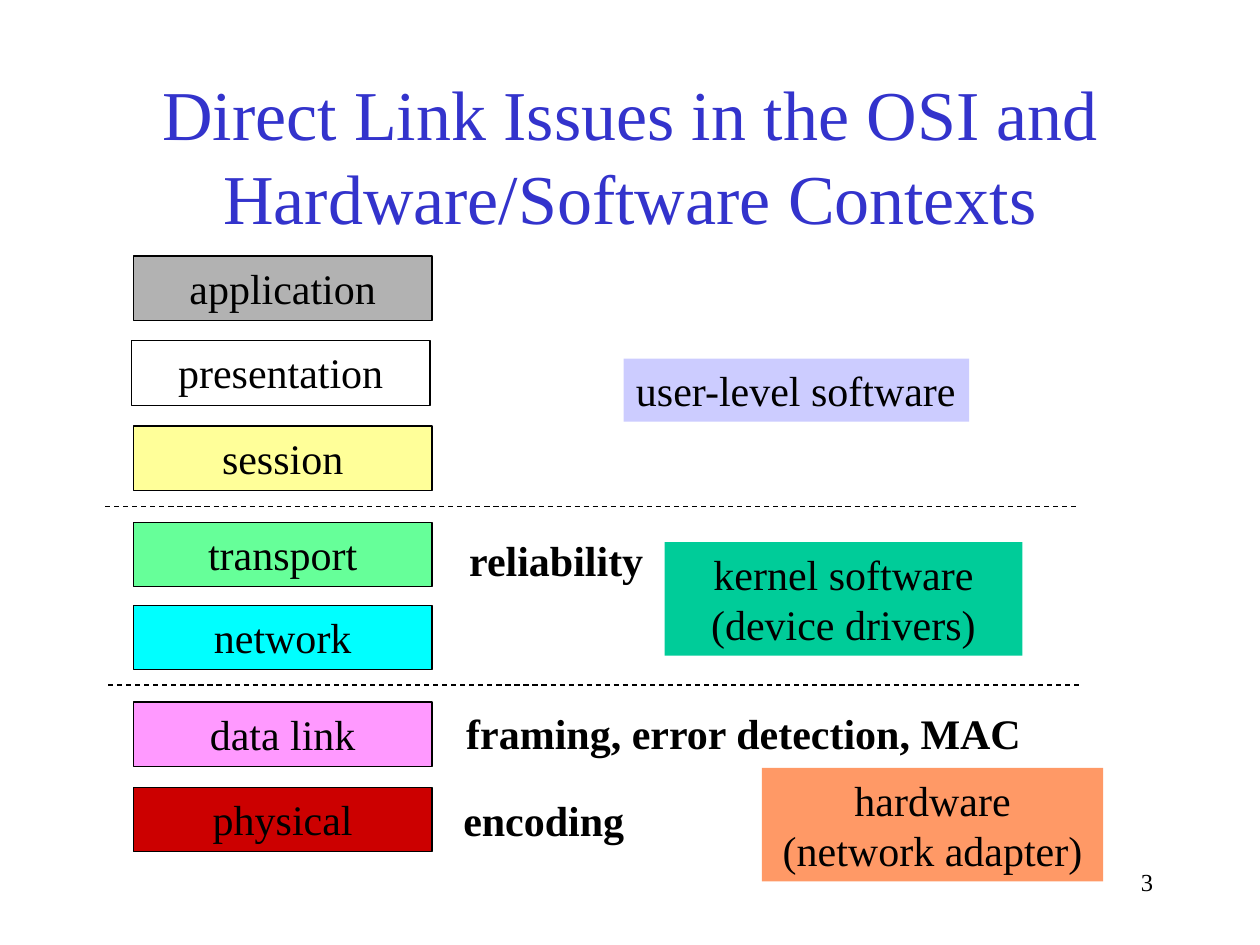
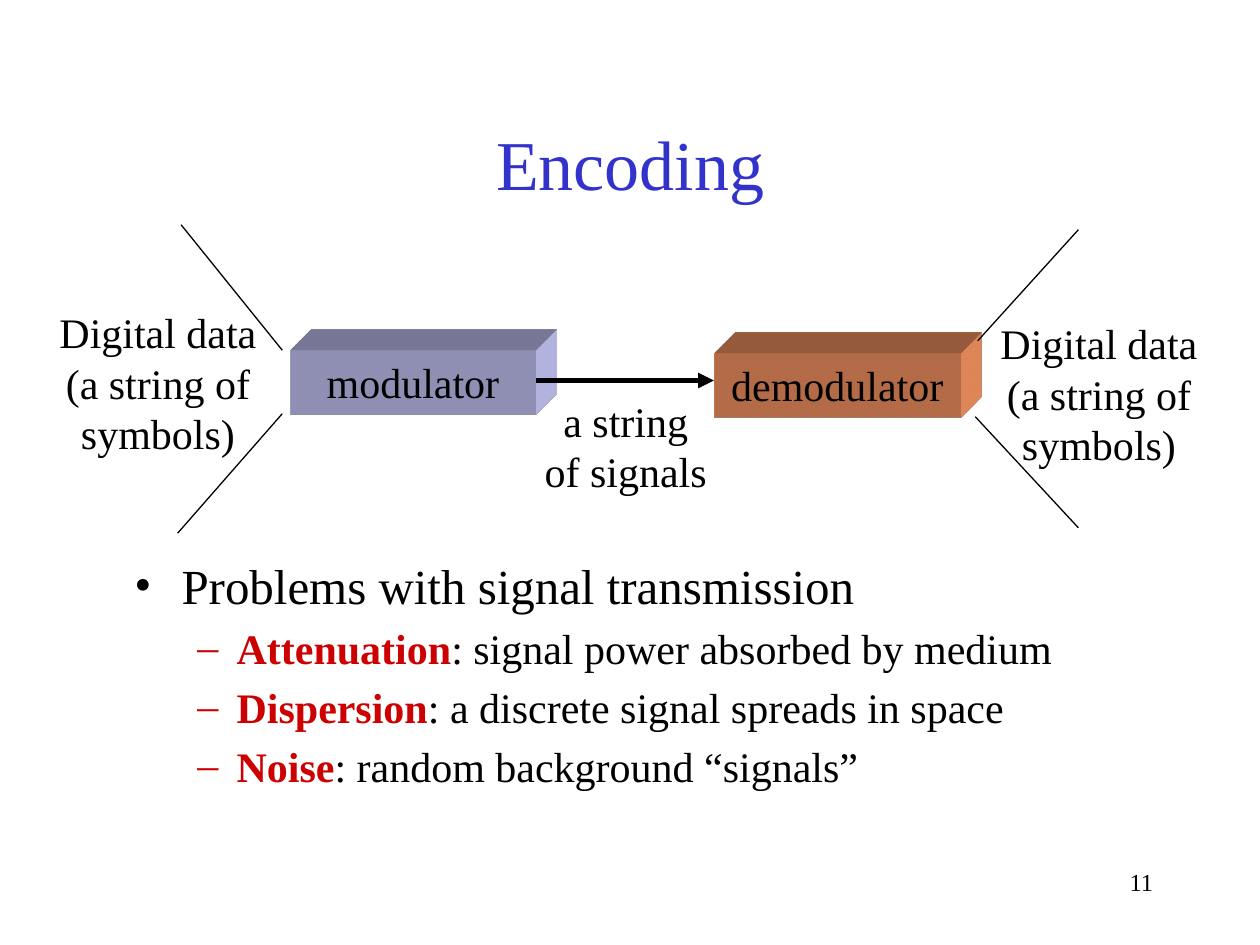
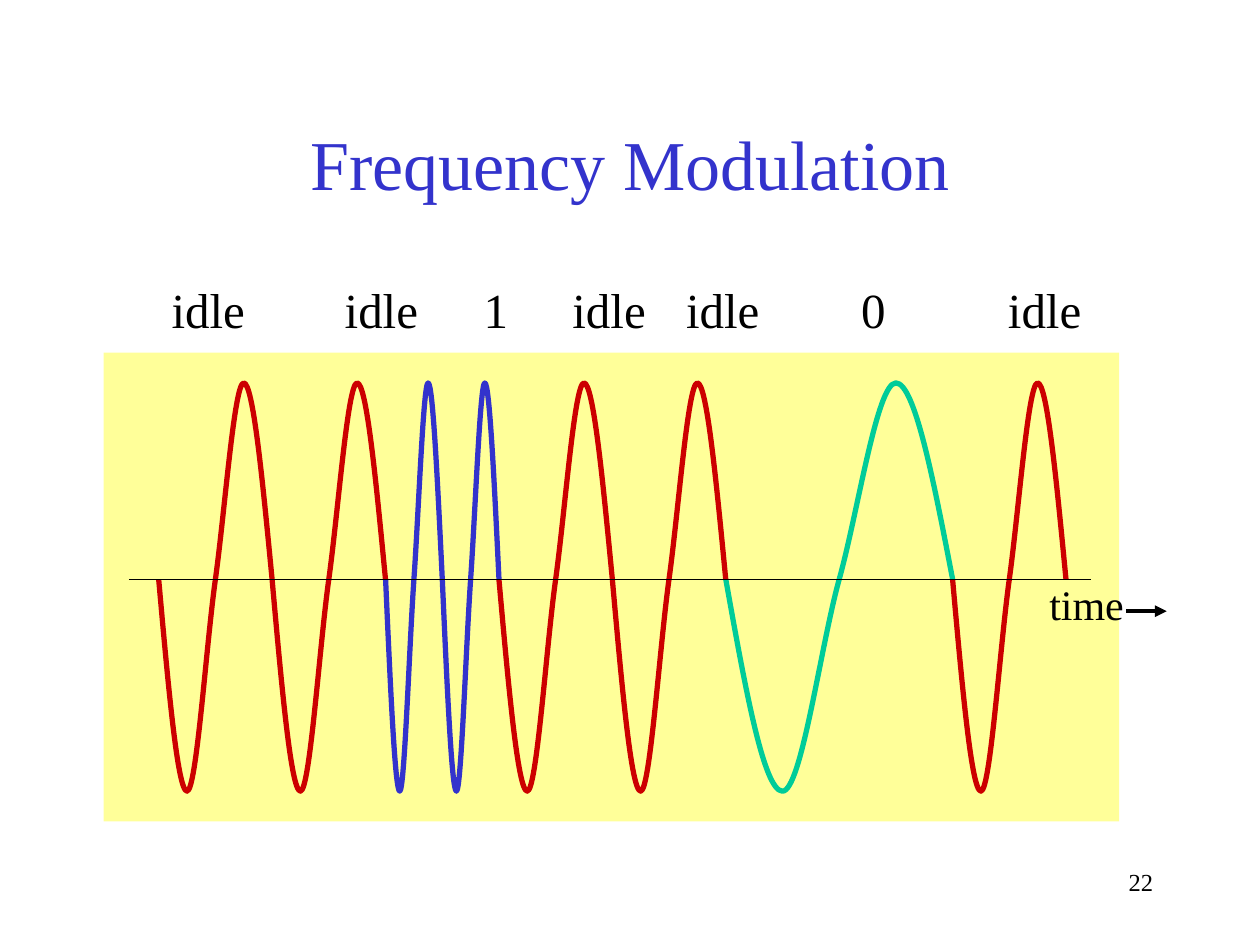
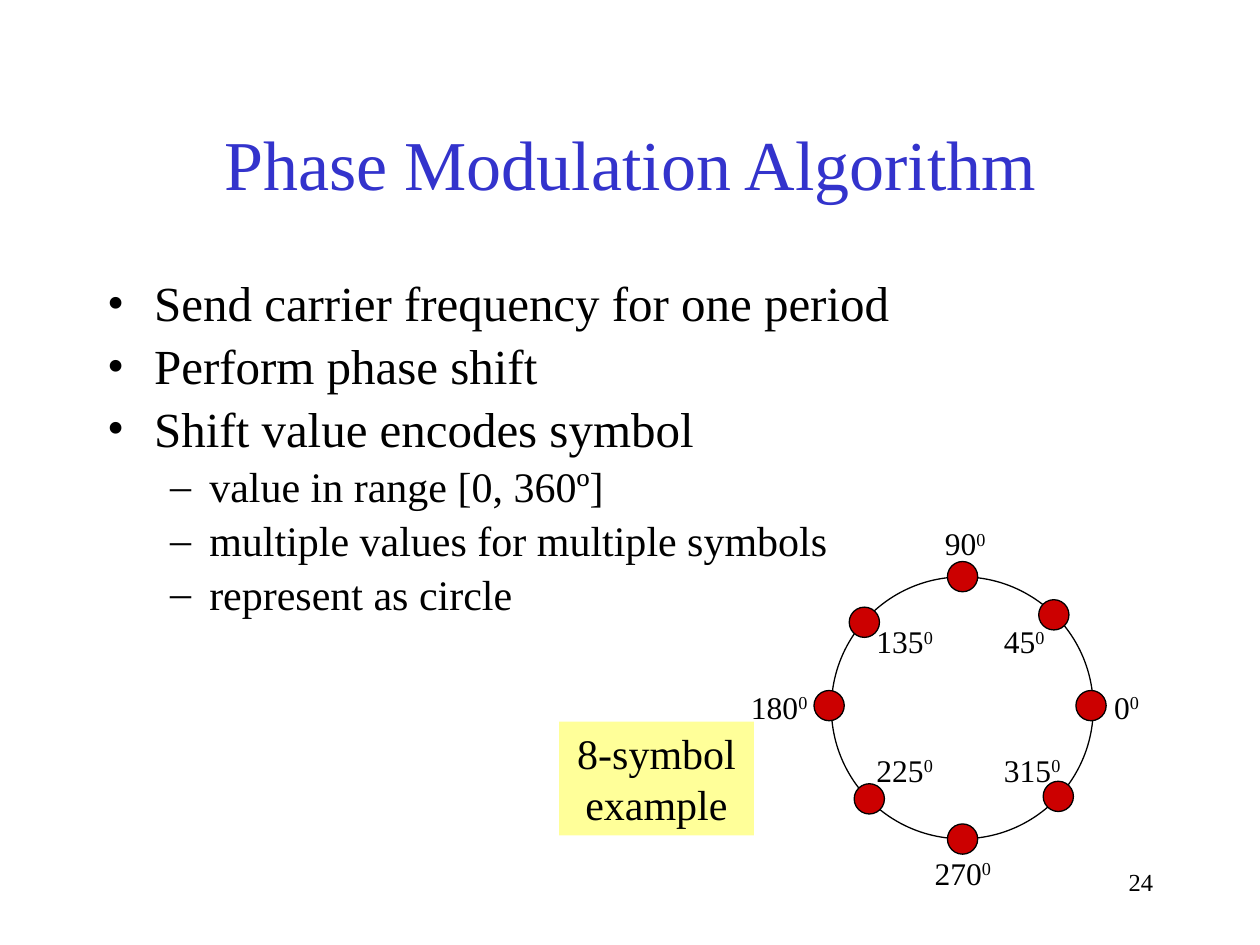
from lxml.etree import SubElement
from pptx import Presentation
from pptx.dml.color import RGBColor
from pptx.enum.dml import MSO_LINE
from pptx.enum.shapes import MSO_CONNECTOR, MSO_SHAPE
from pptx.enum.text import MSO_ANCHOR, MSO_AUTO_SIZE, PP_ALIGN
from pptx.oxml.ns import qn
from pptx.util import Cm, Pt

BLACK = RGBColor(0x00, 0x00, 0x00)
BLUE = RGBColor(0x33, 0x33, 0xCC)
RED = RGBColor(0xCC, 0x00, 0x00)
TEAL = RGBColor(0x00, 0xCC, 0x99)
LILAC = RGBColor(0xCC, 0xCC, 0xFF)
ORANGE = RGBColor(0xFF, 0x99, 0x66)
YELLOW = RGBColor(0xFF, 0xFF, 0x99)
GREEN = RGBColor(0x66, 0xFF, 0x99)
CYAN = RGBColor(0x00, 0xFF, 0xFF)
PINK = RGBColor(0xFF, 0x99, 0xFF)
GRAY = RGBColor(0xB2, 0xB2, 0xB2)

FONT = "Times New Roman"
LEFT, MID, RIGHT = PP_ALIGN.LEFT, PP_ALIGN.CENTER, PP_ALIGN.RIGHT
LEVELS = [("•", 0.95, -0.95, 28), ("–", 2.06, -0.79, 24)]
CURVE = [2.13, 4.27, 4.27, 4.27, 1.37, 0,
         -1.37, -3.96, -3.96, -3.96, -1.98, 0]


class Deck:
    def __init__(self):
        self.prs = Presentation()
        self.prs.slide_width = Cm(25.4)
        self.prs.slide_height = Cm(19.05)
        self.slide = None

    def page(self, title, number, top=1.69, high=3.18):
        self.slide = self.prs.slides.add_slide(self.prs.slide_layouts[6])
        self.text((1.91, top, 21.59, high), title, 40, MID, BLUE,
                  anchor=MSO_ANCHOR.MIDDLE, grow=False)
        self.text((18.22, 17.35, 5.28, 1.27), number, 14, RIGHT, grow=False)

    def run(self, par, text, size, color=BLACK, bold=False, raised=False):
        run = par.add_run()
        run.text = text
        font = run.font
        font.name, font.size, font.bold = FONT, Pt(size), bold
        font.color.rgb = color
        if raised:
            run._r.get_or_add_rPr().set("baseline", "30000")

    def tabs(self, par, stops):
        holder = SubElement(par._p.get_or_add_pPr(), qn("a:tabLst"))
        for stop in stops:
            SubElement(holder, qn("a:tab"), pos=str(Cm(stop)), algn="l")

    def frame(self, shape, wrap=True, grow=True, anchor=MSO_ANCHOR.TOP):
        frame = shape.text_frame
        frame.word_wrap = wrap
        frame.auto_size = (MSO_AUTO_SIZE.SHAPE_TO_FIT_TEXT if grow
                           else MSO_AUTO_SIZE.NONE)
        frame.vertical_anchor = anchor
        return frame

    def area(self, box):
        return self.slide.shapes.add_textbox(*map(Cm, box))

    def text(self, box, text, size=24, align=LEFT, color=BLACK, bold=False,
             **style):
        par = self.frame(self.area(box), **style).paragraphs[0]
        par.alignment = align
        self.run(par, text, size, color, bold)

    def angles(self, box, values, stop=None, wrap=False):
        par = self.frame(self.area(box), wrap).paragraphs[0]
        if stop:
            self.tabs(par, [stop])
        for i, value in enumerate(values):
            self.run(par, ("\t" if i else "") + value, 18)
            self.run(par, "0", 18, raised=True)

    def labels(self, box, items):
        par = self.frame(self.area(box), grow=False).paragraphs[0]
        self.tabs(par, [stop for stop, _ in items])
        self.run(par, "".join("\t" + name for _, name in items), 28)

    def bullets(self, box, rows, pitch=1.0):
        frame = self.frame(self.area(box), grow=False)
        for i, (level, term, text) in enumerate(rows):
            par = frame.add_paragraph() if i else frame.paragraphs[0]
            mark, left, hang, size = LEVELS[level]
            props = par._p.get_or_add_pPr()
            props.set("marL", str(Cm(left)))
            props.set("indent", str(Cm(hang)))
            SubElement(props, qn("a:buFont"), typeface=FONT)
            SubElement(props, qn("a:buChar"), char=mark)
            par.level = level
            par.line_spacing = pitch
            par.space_before = Pt(0.2 * size if i else 0)
            par.font.name, par.font.size = FONT, Pt(size)
            if term:
                self.run(par, term, size, RED, bold=True)
            self.run(par, text, size)

    def shape(self, box, fill=None, text="", edge=True, kind=MSO_SHAPE.RECTANGLE,
              align=MID, wrap=True):
        shape = self.slide.shapes.add_shape(kind, *map(Cm, box))
        shape.shadow.inherit = False
        if fill is None:
            shape.fill.background()
        else:
            shape.fill.solid()
            shape.fill.fore_color.rgb = fill
        if edge:
            shape.line.color.rgb = BLACK
            shape.line.width = Pt(0.75)
        else:
            shape.line.fill.background()
        if text:
            par = self.frame(shape, wrap).paragraphs[0]
            par.alignment = align
            self.run(par, text, 24)
        return shape

    def block(self, box, fill, text):
        props = self.shape(box, fill, text, edge=False)._element.spPr
        scene = SubElement(props, qn("a:scene3d"))
        SubElement(scene, qn("a:camera"), prst="legacyObliqueTopRight")
        SubElement(scene, qn("a:lightRig"), rig="legacyFlat3", dir="b")
        solid = SubElement(props, qn("a:sp3d"), extrusionH="430200",
                           prstMaterial="legacyMatte")
        tint = SubElement(solid, qn("a:extrusionClr"))
        SubElement(tint, qn("a:srgbClr"), val=str(fill))

    def line(self, ends, width=0.75, dash=False, arrow=False):
        link = self.slide.shapes.add_connector(
            MSO_CONNECTOR.STRAIGHT, *map(Cm, ends))
        link.line.color.rgb = BLACK
        link.line.width = Pt(width)
        if dash:
            link.line.dash_style = MSO_LINE.DASH
        props = link._element.spPr
        if arrow:
            SubElement(props.find(qn("a:ln")), qn("a:tailEnd"), type="triangle")
        SubElement(props, qn("a:effectLst"))

    def wave(self, left, axis, width, color):
        pen = self.slide.shapes.build_freeform(Cm(left), Cm(axis))
        pen.add_line_segments(
            [(Cm(left + width * i / len(CURVE)), Cm(axis + rise))
             for i, rise in enumerate(CURVE, 1)], close=False)
        shape = pen.convert_to_shape()
        self.bend(shape)
        shape.shadow.inherit = False
        shape.fill.background()
        shape.line.color.rgb = color
        shape.line.width = Pt(3)

    def bend(self, shape):
        legs = list(shape._element.iter(qn("a:lnTo")))
        for i in range(0, len(legs), 3):
            home = legs[i].getparent()
            arc = SubElement(home, qn("a:cubicBezTo"))
            for leg in legs[i:i + 3]:
                arc.append(leg[0])
                home.remove(leg)


def layers(deck):
    deck.page("Direct Link Issues in the OSI and Hardware/Software Contexts",
              "3", 1.37, 3.5)
    for name, left, top, fill in [
            ("application", 2.69, 5.16, GRAY),
            ("presentation", 2.65, 6.87, None),
            ("session", 2.69, 8.59, YELLOW),
            ("transport", 2.69, 10.53, GREEN),
            ("network", 2.69, 12.2, CYAN),
            ("data link", 2.69, 14.15, PINK),
            ("physical", 2.69, 15.87, RED)]:
        deck.shape((left, top, 6.02, 1.3), fill, name)
    for left, top in [(2.12, 10.21), (2.18, 13.81)]:
        deck.line((left, top, left + 19.63, top), dash=True)
    deck.shape((12.57, 7.23, 6.97, 1.27), LILAC, "user-level software",
               edge=False, align=LEFT, wrap=False)
    deck.shape((13.4, 10.93, 7.21, 2.29), TEAL,
               "kernel software (device drivers)", edge=False)
    for text, left, top, width in [
            ("reliability", 9.21, 10.66, 4.04),
            ("framing, error detection, MAC", 9.15, 14.14, 11.71),
            ("encoding", 9.09, 15.9, 3.76)]:
        deck.text((left, top, width, 1.27), text, bold=True, wrap=False)
    deck.shape((15.36, 15.48, 6.88, 2.29), ORANGE,
               "hardware (network adapter)", edge=False)


def encoding(deck):
    deck.page("Encoding", "11")
    deck.bullets((2.46, 11.07, 21.03, 5.87), [
        (0, "", "Problems with signal transmission"),
        (1, "Attenuation", ": signal power absorbed by medium"),
        (1, "Dispersion", ": a discrete signal spreads in space"),
        (1, "Noise", ": random background “signals”")])
    deck.block((5.85, 7.06, 4.95, 1.3), LILAC, "modulator")
    deck.block((14.4, 7.12, 4.96, 1.3), ORANGE, "demodulator")
    deck.line((10.8, 7.67, 14.39, 7.67), 3, arrow=True)
    deck.text((10.71, 7.84, 3.81, 2.29), "a string of signals", align=MID)
    for ends in [(19.71, 6.87, 21.74, 4.63), (19.66, 8.4, 21.74, 10.64),
                 (5.69, 7.06, 3.65, 4.53), (5.69, 8.34, 3.58, 10.75)]:
        deck.line(ends)
    for left, top in [(19.78, 6.28), (0.81, 6.06)]:
        deck.text((left, top, 4.75, 3.3), "Digital data (a string of symbols)",
                  align=MID)


def frequency(deck):
    deck.page("Frequency Modulation", "22")
    deck.shape((2.09, 7.11, 20.47, 9.45), YELLOW, edge=False)
    deck.labels((2.46, 5.51, 21.59, 1.63), [
        (0.75, "idle"), (4.24, "idle"), (7.04, "1"), (8.83, "idle"),
        (11.12, "idle"), (14.65, "0"), (17.61, "idle")])
    left, axis, period = 3.2, 11.68, 18.29 / 8
    for count, scale, color in [(2, 1, RED), (2, 0.5, BLUE), (2, 1, RED),
                                (1, 2, TEAL), (1, 1, RED)]:
        for _ in range(count):
            deck.wave(left, axis, period * scale, color)
            left += period * scale
    deck.line((2.6, axis, 22, axis))
    deck.text((20.9, 11.53, 2.01, 1.27), "time", align=MID, wrap=False)
    deck.line((22.7, 12.32, 23.52, 12.32), 2.25, arrow=True)


def phase(deck):
    deck.page("Phase Modulation Algorithm", "24")
    deck.bullets((1.91, 5.51, 21.59, 7.52), [
        (0, "", "Send carrier frequency for one period"),
        (0, "", "Perform phase shift"),
        (0, "", "Shift value encodes symbol"),
        (1, "", "value in range [0, 360º]"),
        (1, "", "multiple values for multiple symbols"),
        (1, "", "represent as circle")], 0.9)
    deck.shape((16.76, 11.63, 5.28, 5.28), kind=MSO_SHAPE.OVAL)
    for left, top in [(19.1, 11.32), (16.41, 13.92), (21.69, 13.92),
                      (19.1, 16.61), (17.12, 12.24), (20.94, 12.09),
                      (21.03, 15.75), (17.22, 15.8)]:
        deck.shape((left, top, 0.61, 0.61), RED, kind=MSO_SHAPE.OVAL)
    deck.angles((17.42, 12.42, 4.3, 1.02), ["135", "45"], 2.57, wrap=True)
    deck.angles((17.42, 15.01, 4.3, 1.02), ["225", "315"], 2.57, wrap=True)
    deck.angles((14.89, 13.74, 8.41, 1.02), ["180", "0"], 7.32, wrap=True)
    deck.angles((18.8, 10.44, 1.35, 1.02), ["90"])
    deck.angles((18.59, 17.09, 1.68, 1.02), ["270"])
    deck.shape((11.27, 14.55, 3.93, 2.29), YELLOW, "8-symbol example",
               edge=False)


def main():
    deck = Deck()
    for build in (layers, encoding, frequency, phase):
        build(deck)
    deck.prs.save("out.pptx")


if __name__ == "__main__":
    main()
